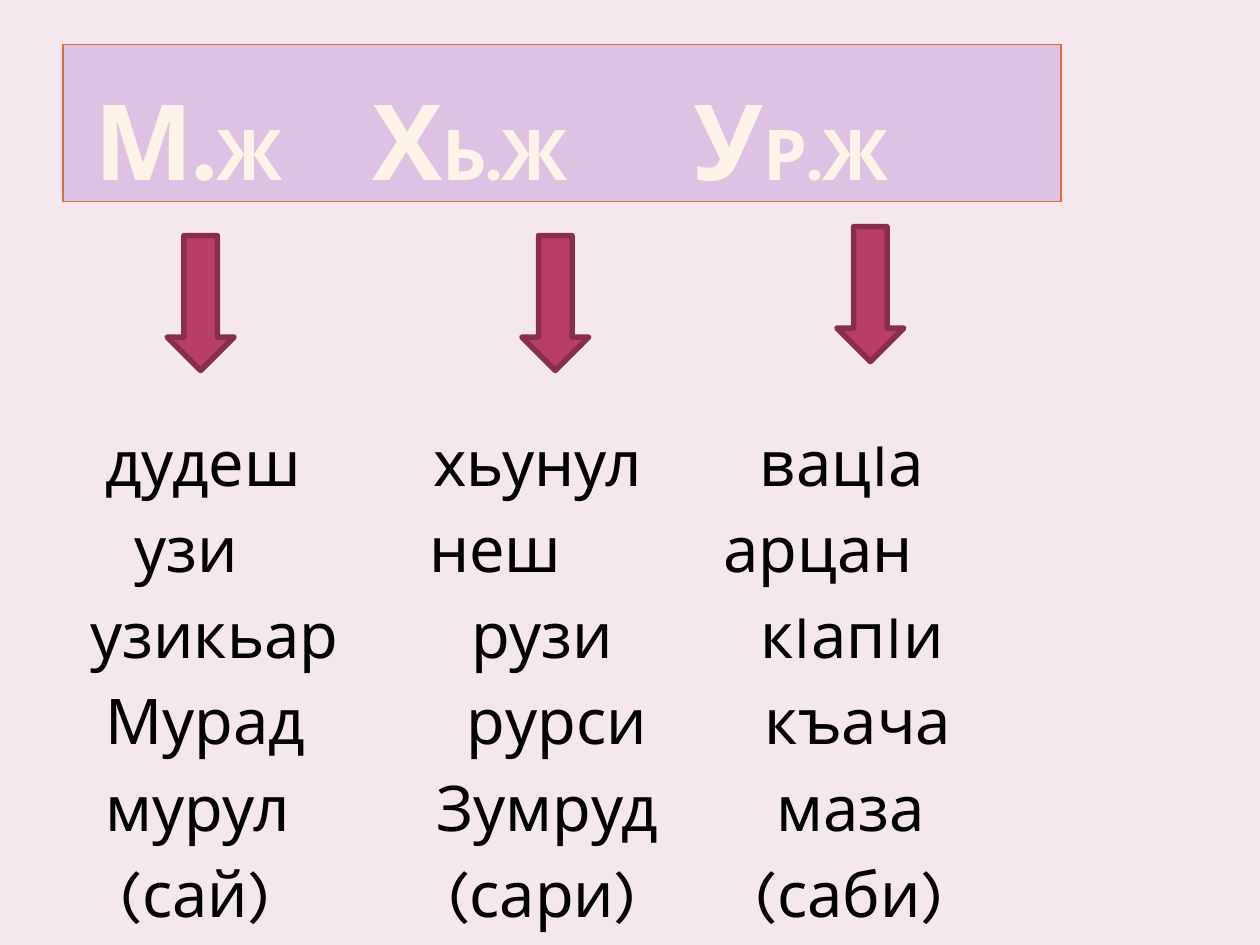
from pptx import Presentation
from pptx.dml.color import RGBColor
from pptx.enum.shapes import MSO_SHAPE
from pptx.enum.text import MSO_ANCHOR, MSO_AUTO_SIZE, PP_ALIGN
from pptx.oxml.ns import qn
from pptx.util import Cm, Pt
from lxml import etree

DOWN = MSO_SHAPE.DOWN_ARROW
TOP, BOTTOM = MSO_ANCHOR.TOP, MSO_ANCHOR.BOTTOM
LEFT = PP_ALIGN.LEFT
FIXED = MSO_AUTO_SIZE.NONE

PINK = RGBColor(0xF4, 0xE7, 0xED)
LILAC = RGBColor(0xDE, 0xC2, 0xE4)
ORANGE = RGBColor(0xDE, 0x6C, 0x36)
CREAM = RGBColor(0xFE, 0xF3, 0xE8)
ROSE = RGBColor(0xB8, 0x3D, 0x68)
WINE = RGBColor(0x88, 0x2D, 0x4D)
BLACK = RGBColor(0, 0, 0)

HEAD_UNIT, BODY_UNIT = 10.3, 8.4  # gap units in points
# Each entry is the gap before the text, in units, then the text.
HEADS = [(1.4, "М.", "Ж"), (5, "Х", "Ь.Ж"), (7, "У", "Р.Ж")]
ROWS = [
    [(2, "дудеш"), (9, "хьунул"), (8, "вацIа")],
    [(4, "узи"), (13, "неш"), (11, "арцан")],
    [(1, "узикьар"), (9, "рузи"), (10, "кIапIи")],
    [(2, "Мурад"), (11, "рурси"), (8, "къача")],
    [(2, "мурул"), (10, "Зумруд"), (8, "маза")],
    [(3, "(сай)"), (12, "(сари)"), (8, "(саби)")],
]
ARROWS = [(3.37, 4.75), (10.52, 4.75), (16.87, 4.57)]


def assign(item, values):
    for name, value in values.items():
        setattr(item, name, value)


class Deck:
    font = "Karla"

    def __init__(self):
        self.file = Presentation()
        assign(self.file, {"slide_width": Cm(25.4), "slide_height": Cm(19.05)})
        self.slide = self.file.slides.add_slide(self.file.slide_layouts[1])
        self.color(self.slide.background, PINK)

    def color(self, item, fill):
        item.fill.solid()
        item.fill.fore_color.rgb = fill

    def edge(self, shape, color, width):
        shape.line.color.rgb = color
        shape.line.width = Pt(width)

    def place(self, shape, box, frame):
        for name, value in zip(("left", "top", "width", "height"), box):
            setattr(shape, name, Cm(value))
        assign(shape.text_frame, {"auto_size": FIXED, "word_wrap": True, **frame})

    def plain(self, para, margin, before=0):
        """Left-align a paragraph without bullet, indented by points."""
        props = para._p.get_or_add_pPr()
        props.set("marL", str(int(Pt(margin))))
        props.set("indent", "0")
        etree.SubElement(props, qn("a:buNone"))
        assign(para, {"alignment": LEFT, "space_before": Pt(before),
                      "line_spacing": 1.0})

    def run(self, para, text, size, color, bold=False):
        run = para.add_run()
        run.text = text
        assign(run.font, {"name": self.font, "size": Pt(size), "bold": bold})
        run.font.color.rgb = color
        return run

    def gap(self, para, size, color, width, bold=False):
        """Add one space, widened by character spacing in points."""
        run = self.run(para, " ", size, color, bold)
        run._r.get_or_add_rPr().set("spc", str(round(width * 100)))

    def title(self, box, heads):
        shape = self.slide.shapes.title
        self.place(shape, box, {
            "vertical_anchor": BOTTOM, "margin_left": Cm(0.13),
            "margin_right": Cm(0.13), "margin_top": 0, "margin_bottom": 0})
        self.color(shape, LILAC)
        self.edge(shape, ORANGE, 0.75)
        para = shape.text_frame.paragraphs[0]
        self.plain(para, heads[0][0] * HEAD_UNIT)
        for i, (units, big, small) in enumerate(heads):
            if i:
                self.gap(para, 40, CREAM, (units - 1) * HEAD_UNIT, True)
            self.run(para, big, 60, CREAM, True)
            self.run(para, small, 40, CREAM, True)

    def body(self, box, rows):
        shape = self.slide.placeholders[1]
        self.place(shape, box, {"vertical_anchor": TOP, "margin_top": Cm(4.07)})
        frame = shape.text_frame
        for i, row in enumerate(rows):
            para = frame.add_paragraph() if i else frame.paragraphs[0]
            self.plain(para, row[0][0] * BODY_UNIT, 6 if i else 0)
            for j, (units, word) in enumerate(row):
                if j:
                    self.gap(para, 36, BLACK, (units - 1) * BODY_UNIT)
                self.run(para, word, 36, BLACK)

    def arrow(self, left, top):
        shape = self.slide.shapes.add_shape(
            DOWN, Cm(left), Cm(top), Cm(1.35), Cm(2.72))
        shape.shadow.inherit = False
        self.color(shape, ROSE)
        self.edge(shape, WINE, 3.15)


def main():
    deck = Deck()
    deck.title((1.27, 0.89, 20.12, 3.18), HEADS)
    deck.body((1.27, 4.47, 20.12, 13.46), ROWS)
    for spot in ARROWS:
        deck.arrow(*spot)
    deck.file.save("out.pptx")


if __name__ == "__main__":
    main()
